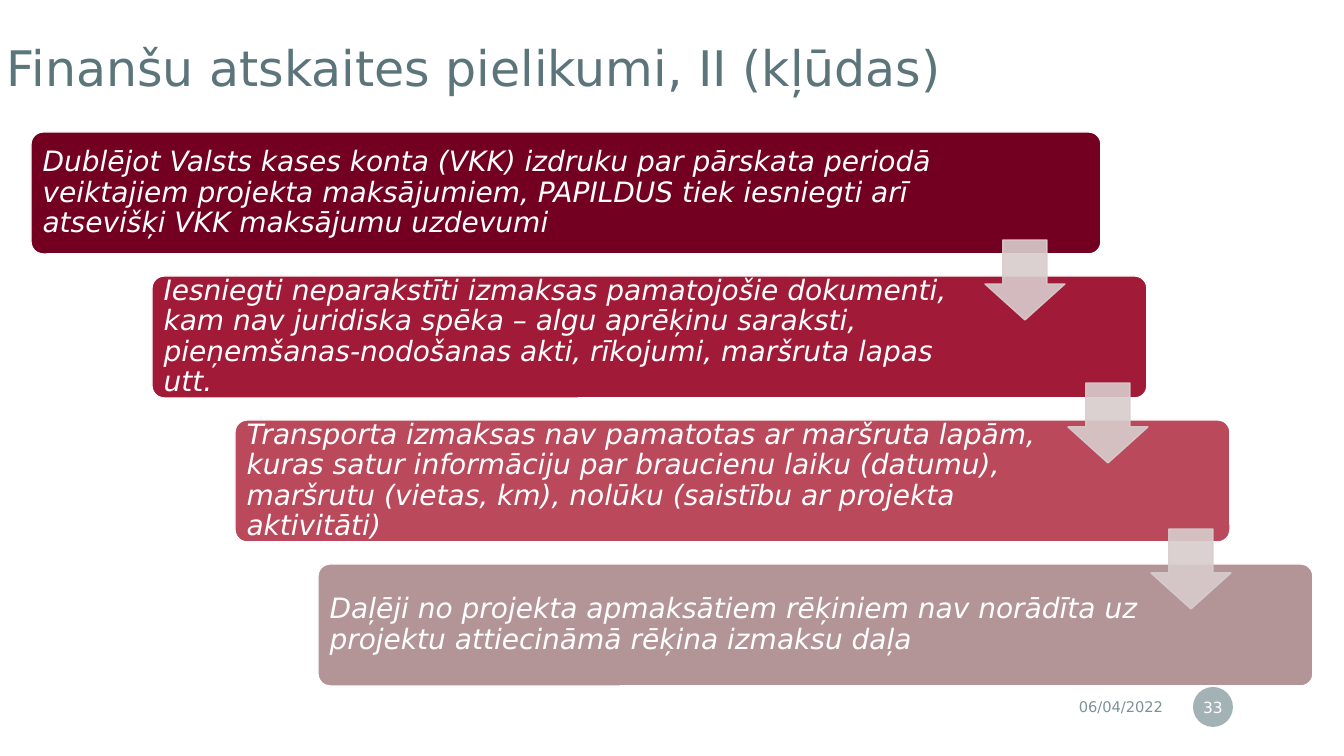
from pptx import Presentation
from pptx.dml.color import RGBColor
from pptx.enum.shapes import MSO_SHAPE
from pptx.enum.text import MSO_ANCHOR, PP_ALIGN
from pptx.oxml.ns import qn
from pptx.oxml.xmlchemy import OxmlElement
from pptx.util import Pt

PX = 914400 / 100.8  # EMU in one px
FONT = "DejaVu Sans"
WHITE = RGBColor(0xFF, 0xFF, 0xFF)
TITLE = RGBColor(0x5B, 0x75, 0x7A)
SLATE = RGBColor(0x7C, 0x93, 0x96)
ARROW = RGBColor(0xD8, 0xCC, 0xCD)
WINE = RGBColor(0x74, 0x00, 0x21)
CRIMSON = RGBColor(0xA1, 0x1A, 0x38)
ROSE = RGBColor(0xB9, 0x49, 0x5B)
DUSTY = RGBColor(0xB3, 0x95, 0x98)


def add_box(kind, box, fill=None, line=None, opacity=100):
    """Add a preset shape, or a text box when kind is None."""
    box = [round(v * PX) for v in box]
    if kind is None:
        return slide.shapes.add_textbox(*box)
    s = slide.shapes.add_shape(kind, *box)
    s.shadow.inherit = False
    s.fill.solid()
    s.fill.fore_color.rgb = fill
    if line is None:
        s.line.fill.background()
    else:
        s.line.color.rgb = line
        s.line.width = Pt(1)
    if opacity < 100:
        for clr in list(s._element.spPr.iter(qn("a:srgbClr"))):
            alpha = OxmlElement("a:alpha")
            alpha.set("val", str(opacity * 1000))
            clr.append(alpha)
    return s


def write(s, text, size, color, insets, anchor=MSO_ANCHOR.MIDDLE,
          align=PP_ALIGN.LEFT, spacing=1.0, italic=False):
    """Fill a shape with one paragraph; insets are left, top, right, bottom."""
    tf = s.text_frame
    left, top, right, bottom = [round(v * PX) for v in insets]
    frame = {"word_wrap": True, "vertical_anchor": anchor,
             "margin_left": left, "margin_top": top,
             "margin_right": right, "margin_bottom": bottom}
    for name, value in frame.items():
        setattr(tf, name, value)
    p = tf.paragraphs[0]
    p.alignment = align
    p.line_spacing = spacing
    r = p.add_run()
    r.text = text
    for name, value in {"name": FONT, "size": Pt(size), "italic": italic}.items():
        setattr(r.font, name, value)
    r.font.color.rgb = color


prs = Presentation()
prs.slide_width = round(1344 * PX)
prs.slide_height = round(756 * PX)
slide = prs.slides.add_slide(prs.slide_layouts[6])

# Title
s = add_box(None, (-13, 35, 1150, 120))
write(s, "Finanšu atskaites pielikumi, II (kļūdas)", 35, TITLE, (20, 9, 20, 20),
      anchor=MSO_ANCHOR.TOP, spacing=0.9)

# Date and slide number
s = add_box(None, (870, 689, 303, 35))
write(s, "06/04/2022", 10.5, SLATE, (10, 5, 10, 5), align=PP_ALIGN.RIGHT)
s = add_box(MSO_SHAPE.OVAL, (1193, 687, 40, 40), SLATE, opacity=70)
write(s, "33", 11, WHITE, (2, 5, 2, 5), align=PP_ALIGN.CENTER)

# Staircase of errors: left, width, right inset, fill, text
steps = [
    (31, 1070, 153, WINE,
     "Dublējot Valsts kases konta (VKK) izdruku par pārskata periodā veiktajiem "
     "projekta maksājumiem, PAPILDUS tiek iesniegti arī atsevišķi VKK maksājumu "
     "uzdevumi"),
    (152, 995, 170, CRIMSON,
     "Iesniegti neparakstīti izmaksas pamatojošie dokumenti, kam nav juridiska "
     "spēka – algu aprēķinu saraksti, pieņemšanas-nodošanas akti, rīkojumi, "
     "maršruta lapas utt."),
    (235, 995, 170, ROSE,
     "Transporta izmaksas nav pamatotas ar maršruta lapām, kuras satur informāciju "
     "par braucienu laiku (datumu), maršrutu (vietas, km), nolūku (saistību ar "
     "projekta aktivitāti)"),
    (318, 995, 170, DUSTY,
     "Daļēji no projekta apmaksātiem rēķiniem nav norādīta uz projektu attiecināmā "
     "rēķina izmaksu daļa"),
]
for i, (left, width, inset, fill, text) in enumerate(steps):
    s = add_box(MSO_SHAPE.ROUNDED_RECTANGLE, (left, 132 + 144 * i, width, 122),
                fill, WHITE)
    s.adjustments[0] = 0.1
    write(s, text, 20, WHITE, (8, 8, inset, 8), spacing=0.9, italic=True)

# Arrows from each step to the next
for i, top in enumerate((240, 383, 529)):
    s = add_box(MSO_SHAPE.DOWN_ARROW, (985 + 83 * i, top, 80, 80), ARROW, ARROW, 90)
    # The preset lists the shaft width first, then the head length
    s.adjustments[0] = 0.55
    s.adjustments[1] = 0.45

prs.save("out.pptx")
